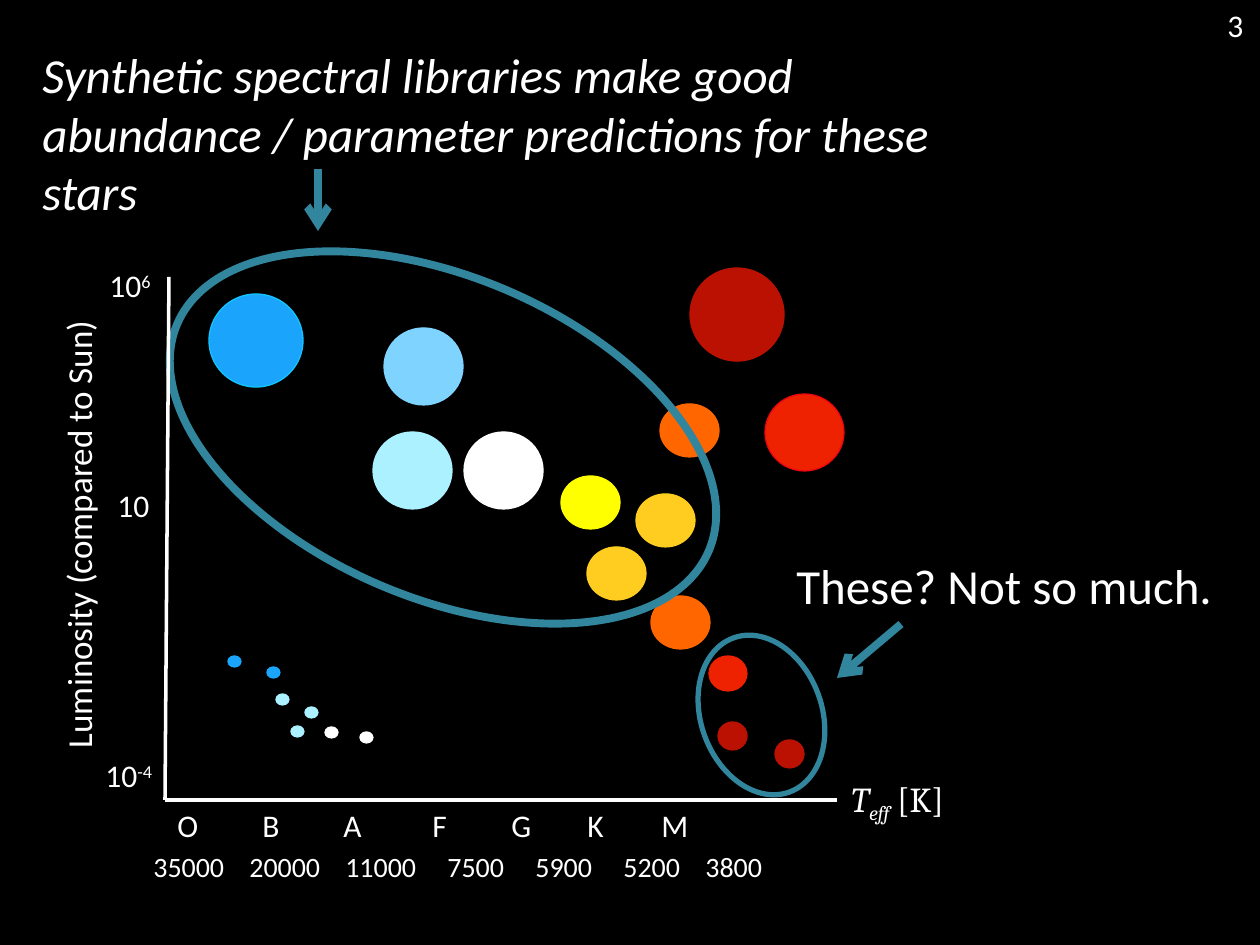
"""Build the slide on stellar luminosity against effective temperature."""
import lxml.etree
import pptx
import pptx.dml.color
import pptx.enum.shapes
import pptx.enum.text
import pptx.oxml.ns
import pptx.util

PX = 914400 / 126
WHITE, TEAL = "FFFFFF", "31859C"
BLUE, SKY, PALE = "1AA4FB", "7FD4FF", "ABF1FF"
YELLOW, GOLD, ORANGE = "FFFF00", "FFCD20", "FF6600"
RED, DARK_RED = "EE2200", "BB1102"
qn = pptx.oxml.ns.qn
rgb = pptx.dml.color.RGBColor.from_string


def px(*lengths):
    return [round(length * PX) for length in lengths]


def write(box, runs, size, font="Calibri", italic=None, tabs=()):
    label = slide.shapes.add_textbox(*px(*box))
    frame = label.text_frame
    frame.word_wrap = True
    frame.auto_size = pptx.enum.text.MSO_AUTO_SIZE.SHAPE_TO_FIT_TEXT
    line = frame.paragraphs[0]
    if tabs:
        stops = lxml.etree.SubElement(line._p.get_or_add_pPr(), qn("a:tabLst"))
        for stop in px(*tabs):
            lxml.etree.SubElement(stops, qn("a:tab"), pos=str(stop), algn="l")
    line.font.name = font
    line.font.size = pptx.util.Pt(size)
    line.font.italic = italic
    line.font.color.rgb = rgb(WHITE)
    for words, baseline in runs:
        run = line.add_run()
        run.text = words
        if baseline:
            run.font._element.set("baseline", str(baseline * 1000))
    return label


deck = pptx.Presentation()
deck.slide_width, deck.slide_height = px(1260, 945)
slide = deck.slides.add_slide(deck.slide_layouts[6])
slide.background.fill.solid()
slide.background.fill.fore_color.rgb = rgb("000000")

stars = {
    (94, 93): [(209, 294, BLUE, "12C5FF"), (690, 268, DARK_RED, DARK_RED)],
    (79, 77): [(373, 432, PALE, PALE), (384, 328, SKY, SKY),
               (464, 432, WHITE, WHITE), (765, 394, RED, "ED0610")],
    (59, 53): [(651, 596, ORANGE, ORANGE), (587, 547, GOLD, GOLD),
               (561, 476, YELLOW, YELLOW), (660, 404, ORANGE, ORANGE),
               (636, 494, GOLD, GOLD)],
    (38, 35): [(709, 656, RED, RED)],
    (29, 28): [(718, 722, DARK_RED, DARK_RED), (775, 740, DARK_RED, DARK_RED)],
    (13, 11): [(228, 656, BLUE, "1AA7FF"), (267, 667, BLUE, "1AA7FF"),
               (276, 694, PALE, PALE), (305, 707, PALE, PALE),
               (291, 726, PALE, PALE), (325, 727, WHITE, WHITE),
               (360, 732, WHITE, WHITE)],
}
ellipses = [
    (left, top, *size, fill, edge, 0.75, 0)
    for size, group in stars.items()
    for left, top, fill, edge in group
]
ellipses += [
    (154, 277, 578, 321, None, TEAL, 4.5, 23.1),
    (701, 633, 121, 164, None, TEAL, 3, 340),
]
for left, top, width, height, fill, edge, weight, turn in ellipses:
    star = slide.shapes.add_shape(
        pptx.enum.shapes.MSO_SHAPE.OVAL, *px(left, top, width, height))
    star.shadow.inherit = False
    star.rotation = turn
    if fill:
        star.fill.solid()
        star.fill.fore_color.rgb = rgb(fill)
    else:
        star.fill.background()
    star.line.color.rgb = rgb(edge)
    star.line.width = pptx.util.Pt(weight)

for ends, color, weight, pointed in [
    ((169, 277, 165, 800), WHITE, 2, False),
    ((165, 800, 837, 800), WHITE, 2, False),
    ((318, 169, 318, 231), TEAL, 4.5, True),
    ((901, 624, 837, 678), TEAL, 4.5, True),
]:
    stroke = slide.shapes.add_connector(
        pptx.enum.shapes.MSO_CONNECTOR.STRAIGHT, *px(*ends))
    stroke.line.color.rgb = rgb(color)
    stroke.line.width = pptx.util.Pt(weight)
    properties = stroke._element.spPr
    if pointed:
        lxml.etree.SubElement(
            properties.find(qn("a:ln")), qn("a:tailEnd"), type="arrow")
    lxml.etree.SubElement(properties, qn("a:effectLst"))

write((165, 800, 806, 50), [("O\tB\tA\tF\tG\tK\tM", 0)], 18,
      tabs=(85, 166, 255, 334, 410, 484))
write((141, 843, 790, 47),
      [("35000\t20000\t11000\t7500\t5900\t5200\t3800", 0)], 16,
      tabs=(96, 192, 294, 382, 470, 552))
temperature = write((839, 771, 170, 97), [("T", 0), ("eff", -25), (" [K]", 0)],
                    20, "Cambria")
for symbol in temperature.text_frame.paragraphs[0].runs[:2]:
    symbol.font.italic = True

for left, top, runs in [
    (97, 260, [("10", 0), ("6", 30)]),
    (93, 750, [("10", 0), ("-4", 30)]),
    (105, 480, [("10", 0)]),
]:
    write((left, top, 100, 50), runs, 18)
luminosity = write((-300, 486, 799, 97), [("Luminosity (compared to Sun)", 0)], 20)
luminosity.rotation = 270
luminosity.text_frame.paragraphs[0].alignment = pptx.enum.text.PP_ALIGN.CENTER

write((30, 38, 994, 131),
      [("Synthetic spectral libraries make good abundance / "
        "parameter predictions for these stars", 0)], 28, italic=True)
write((784, 549, 907, 72), [("These? Not so much.", 0)], 28)
page = write((1215, 0, 44, 48), [("3", 0)], 18)
page.text_frame.auto_size = pptx.enum.text.MSO_AUTO_SIZE.NONE
page.text_frame.paragraphs[0].space_before = pptx.util.Pt(3.6)

deck.save("out.pptx")
